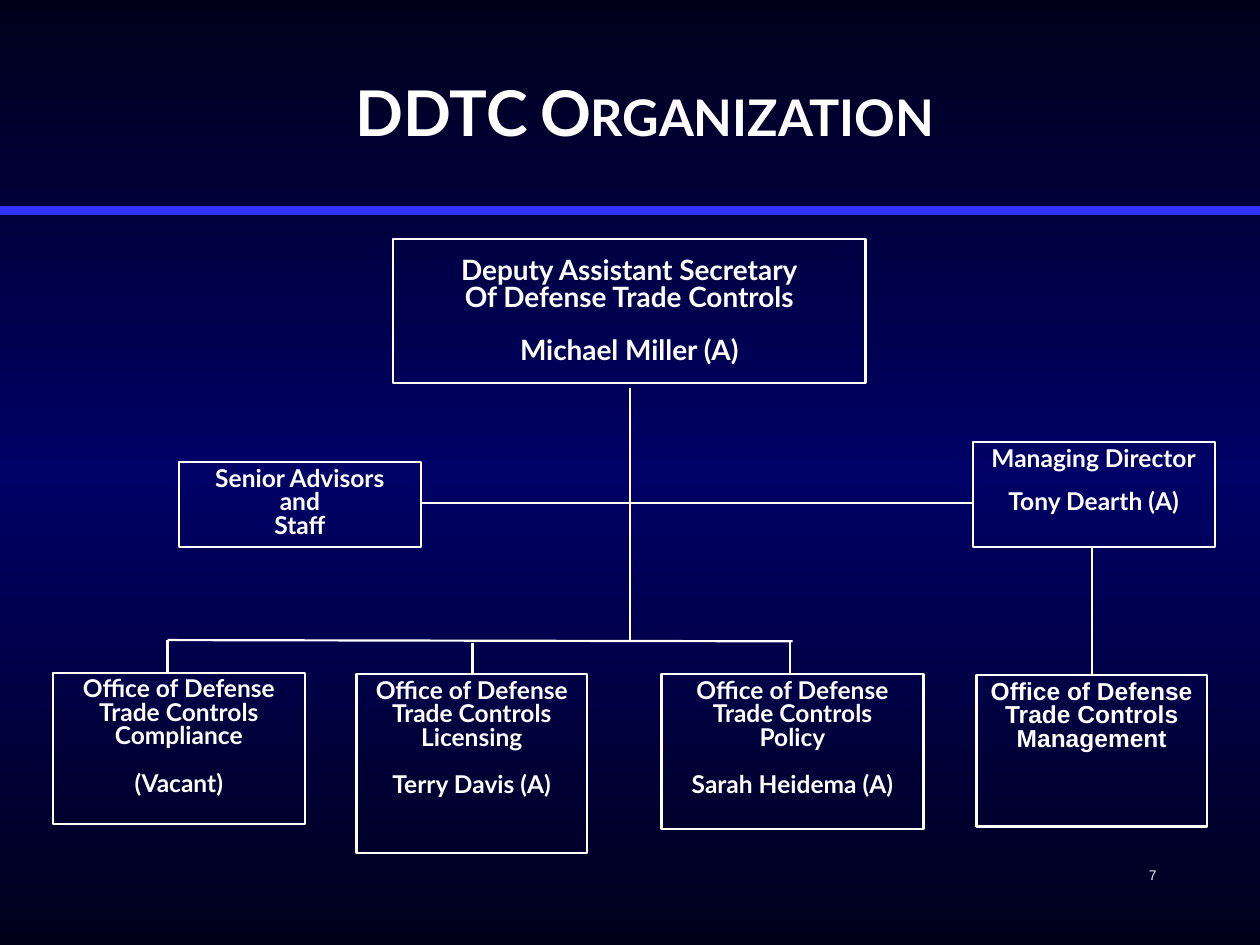
"""Build the DDTC organization chart slide."""
import copy

import pptx
import pptx.dml.color
import pptx.enum.shapes
import pptx.enum.text
import pptx.oxml.ns
import pptx.oxml.xmlchemy
import pptx.util

Inches = pptx.util.Inches
Pt = pptx.util.Pt
RGBColor = pptx.dml.color.RGBColor
PP_ALIGN = pptx.enum.text.PP_ALIGN

WHITE = RGBColor(0xFF, 0xFF, 0xFF)
NIGHT = RGBColor(0x00, 0x00, 0x1B)
NAVY = RGBColor(0x00, 0x00, 0x66)
RULE_BLUE = RGBColor(0x33, 0x33, 0xFF)
PALE_BLUE = RGBColor(0xE5, 0xEF, 0xFA)

UNIT_HEADING = ["Office of Defense", "Trade Controls"]
UNITS = [
    ((0.42, 5.34, 2, 1.2), "Compliance", "(Vacant)", "Lato"),
    ((2.83, 5.35, 1.83, 1.42), "Licensing", "Terry Davis (A)", "Lato"),
    ((5.25, 5.35, 2.08, 1.23), "Policy", "Sarah Heidema (A)", "Lato"),
    ((7.75, 5.36, 1.83, 1.2), "Management", None, "Arial"),
]
BRANCHES = [
    (5, 3.08, 5, 5.08),
    (3.33, 3.99, 7.72, 3.99),
    (1.33, 5.08, 6.29, 5.09),
    (1.33, 5.08, 1.33, 5.33),
    (3.75, 5.1, 3.75, 5.35),
    (6.27, 5.09, 6.27, 5.34),
    (8.67, 4.33, 8.67, 5.35),
]


class OrganizationSlide:
    """Hold the chart style and draw each kind of element on the page."""

    def __init__(self, deck):
        self.page = deck.slides.add_slide(deck.slide_layouts[5])
        self.text_format = {"name": "Lato", "size": Pt(14), "bold": True}

    def format_text(self, para, color=WHITE, **changes):
        """Apply the shared text style with any changes."""
        for span in para.runs:
            for name, value in {**self.text_format, **changes}.items():
                setattr(span.font, name, value)
            span.font.color.rgb = color

    def background(self, edge, middle):
        """Shade the page vertically from edge to middle and back."""
        fill = self.page.background.fill
        fill.gradient()
        fill.gradient_angle = 90
        stop_list = self.page.element.find(".//" + pptx.oxml.ns.qn("a:gsLst"))
        stop_list.append(copy.deepcopy(stop_list[-1]))
        for stop, place, color in zip(fill.gradient_stops, (0, 0.5, 1), (edge, middle, edge)):
            stop.position = place
            stop.color.rgb = color

    def title(self, text, area):
        """Place the small-caps heading in the title placeholder."""
        box = self.page.shapes.title
        box.left, box.top, box.width, box.height = map(Inches, area)
        box.text_frame.text = text
        para = box.text_frame.paragraphs[0]
        para.alignment = PP_ALIGN.CENTER
        self.format_text(para, size=Pt(36))
        para.runs[0].font._element.set("cap", "small")

    def line(self, ends, color=WHITE, width=1.25):
        """Draw a straight line between two points."""
        connector = self.page.shapes.add_connector(
            pptx.enum.shapes.MSO_CONNECTOR.STRAIGHT, *map(Inches, ends))
        connector.line.color.rgb = color
        connector.line.width = Pt(width)
        properties = connector._element.spPr
        properties.append(properties.makeelement(pptx.oxml.ns.qn("a:effectLst"), {}))

    def unit(self, area, heading, person=None, gap=13.5, top_inset=0.05, **changes):
        """Draw an outlined box with heading lines and a person below a gap."""
        box = self.page.shapes.add_shape(
            pptx.enum.shapes.MSO_SHAPE.RECTANGLE, *map(Inches, area))
        box.shadow.inherit = False
        box.fill.background()
        box.line.color.rgb = WHITE
        box.line.width = Pt(1.25)
        frame = box.text_frame
        frame.word_wrap = True
        frame.vertical_anchor = pptx.enum.text.MSO_ANCHOR.TOP
        frame.margin_top = Inches(top_inset)
        frame.text = "\n".join(heading + ([person] if person else []))
        for para in frame.paragraphs:
            para.alignment = PP_ALIGN.CENTER
            para.line_spacing = 0.8
            self.format_text(para, **changes)
        if person:
            frame.paragraphs[-1].space_before = Pt(gap)

    def page_number(self, text, area):
        """Place the small page number."""
        box = self.page.shapes.add_textbox(*map(Inches, area))
        box.text_frame.word_wrap = True
        box.text_frame.text = text
        self.format_text(box.text_frame.paragraphs[0], PALE_BLUE,
                         name="Arial", size=Pt(8), bold=False)


def main():
    """Build and save the deck."""
    deck = pptx.Presentation()
    deck.slide_width, deck.slide_height = Inches(10), Inches(7.5)
    slide = OrganizationSlide(deck)
    slide.background(NIGHT, NAVY)
    slide.title("DDTC Organization", (1.83, 0.53, 6.58, 0.71))
    slide.line((0, 1.67, 10, 1.67), RULE_BLUE, 5)
    for ends in BRANCHES:
        slide.line(ends)
    slide.unit((3.12, 1.9, 3.75, 1.14),
               ["Deputy Assistant Secretary", "Of Defense Trade Controls"],
               "Michael Miller (A)", gap=15, top_inset=0.16, size=Pt(16))
    slide.unit((1.42, 3.67, 1.92, 0.67), ["Senior Advisors", "and", "Staff"])
    slide.unit((7.72, 3.51, 1.92, 0.83), ["Managing Director"], "Tony Dearth (A)", gap=11.5)
    for area, office, person, font in UNITS:
        slide.unit(area, UNIT_HEADING + [office], person, name=font)
    slide.page_number("7", (9.02, 6.83, 0.23, 0.22))
    deck.save("out.pptx")


if __name__ == "__main__":
    main()
